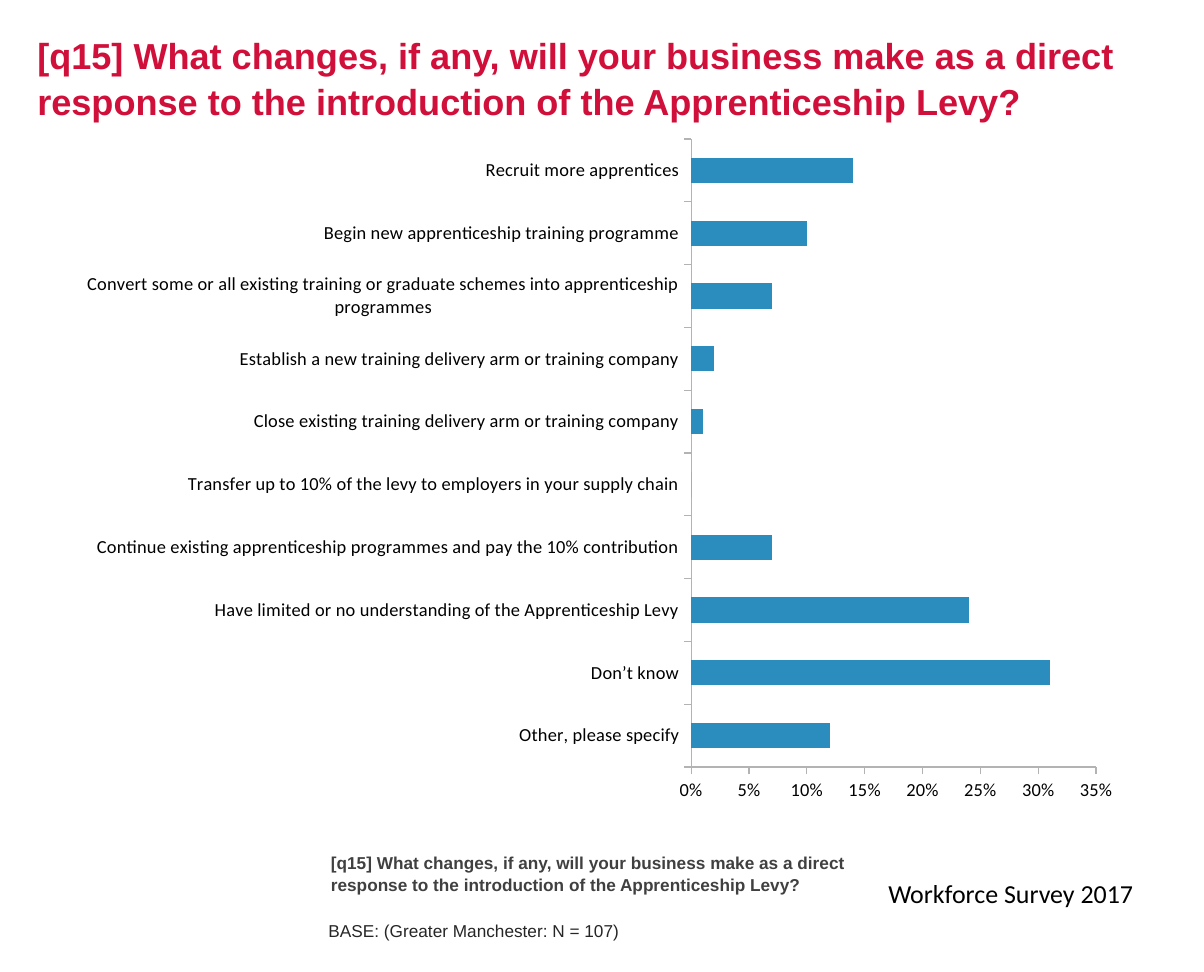
from pptx import Presentation
from pptx.chart.data import CategoryChartData
from pptx.dml.color import RGBColor
from pptx.enum import chart as charts, text
from pptx.oxml import parse_xml
from pptx.oxml.ns import nsdecls
from pptx.util import Inches, Pt

RED = RGBColor(0xD0, 0x10, 0x3A)
BLUE = RGBColor(0x2B, 0x8C, 0xBE)
BLACK = RGBColor(0x00, 0x00, 0x00)
DARK_GREY = RGBColor(0x40, 0x40, 0x40)
CHARCOAL = RGBColor(0x26, 0x26, 0x26)
AXIS_GREY = RGBColor(0xB3, 0xB3, 0xB3)

QUESTION = ("[q15] What changes, if any, will your business make as a direct "
            "response to the introduction of the Apprenticeship Levy?")

ANSWERS = [
    ("Other, please specify", 0.12),
    ("Don’t know", 0.31),
    ("Have limited or no understanding of the Apprenticeship Levy", 0.24),
    ("Continue existing apprenticeship programmes and pay the 10% contribution", 0.07),
    ("Transfer up to 10% of the levy to employers in your supply chain", 0),
    ("Close existing training delivery arm or training company", 0.01),
    ("Establish a new training delivery arm or training company", 0.02),
    ("Convert some or all existing training or graduate schemes into "
     "apprenticeship programmes", 0.07),
    ("Begin new apprenticeship training programme", 0.1),
    ("Recruit more apprentices", 0.14),
]


def write(shape, words, box, size, color, font="Arial", bold=False,
          anchor=text.MSO_ANCHOR.BOTTOM, spacing=1.0):
    """Place a text shape at box (left, top, width, height) and fill it."""
    shape.left, shape.top, shape.width, shape.height = (Inches(n) for n in box)
    frame = shape.text_frame
    frame.word_wrap = True
    frame.auto_size = text.MSO_AUTO_SIZE.NONE
    frame.vertical_anchor = anchor
    paragraph = frame.paragraphs[0]
    paragraph.alignment = text.PP_ALIGN.LEFT
    paragraph.line_spacing = spacing
    run = paragraph.add_run()
    run.text = words
    run.font.name = font
    run.font.size = Pt(size)
    run.font.bold = bold
    run.font.color.rgb = color


presentation = Presentation()
presentation.slide_width = Inches(10)
presentation.slide_height = Inches(8.07)
slide = presentation.slides.add_slide(presentation.slide_layouts[5])

# Title and footer texts
write(slide.shapes.title, QUESTION, (0.21, 0.2, 9.51, 0.88), 21.6, RED,
      bold=True, anchor=text.MSO_ANCHOR.MIDDLE, spacing=1.06)

footers = [
    ("Workforce Survey 2017", (7.28, 7.24, 2.43, 0.36),
     dict(size=15.5, color=BLACK, font="Calibri", anchor=text.MSO_ANCHOR.TOP)),
    (QUESTION, (2.65, 7.11, 4.6, 0.37),
     dict(size=10.3, color=DARK_GREY, bold=True, spacing=1.06)),
    ("BASE: (Greater Manchester: N = 107)", (2.63, 7.48, 4.6, 0.38),
     dict(size=10.3, color=CHARCOAL)),
]
for words, box, style in footers:
    write(slide.shapes.add_textbox(0, 0, 0, 0), words, box, **style)

# Bar chart of the answers
data = CategoryChartData(number_format="0%")
data.categories = [answer for answer, share in ANSWERS]
data.add_series("Series 1", [share for answer, share in ANSWERS])
chart = slide.shapes.add_chart(
    charts.XL_CHART_TYPE.BAR_CLUSTERED,
    Inches(0.52), Inches(1.04), Inches(8.85), Inches(5.73), data).chart
chart.has_legend = False
chart.has_title = False
chart.font.name = "Calibri"
chart.font.size = Pt(11)
chart.font.color.rgb = BLACK

plot = chart.plots[0]
plot.gap_width = 150
plot.vary_by_categories = False
series = plot.series[0]
series.format.fill.solid()
series.format.fill.fore_color.rgb = BLUE
series.invert_if_negative = False

for axis in (chart.category_axis, chart.value_axis):
    axis.has_major_gridlines = False
    axis.major_tick_mark = charts.XL_TICK_MARK.OUTSIDE
    axis.minor_tick_mark = charts.XL_TICK_MARK.NONE
    axis.format.line.color.rgb = AXIS_GREY
    axis.format.line.width = Pt(0.75)
chart.value_axis.minimum_scale = 0
chart.value_axis.maximum_scale = 0.35
chart.value_axis.major_unit = 0.05
chart.value_axis.tick_labels.number_format = "0%"
chart.value_axis.tick_labels.number_format_is_linked = False

# Fixed inner plot area, as fractions of the chart
plot_area = chart.plots[0]._element.getparent()
for layout in plot_area.findall("{*}layout"):
    plot_area.remove(layout)
plot_area.insert(0, parse_xml(
    f'<c:layout {nsdecls("c")}><c:manualLayout><c:layoutTarget val="inner"/>'
    '<c:xMode val="edge"/><c:yMode val="edge"/><c:x val="0.59"/><c:y val="0.02"/>'
    '<c:w val="0.38"/><c:h val="0.91"/></c:manualLayout></c:layout>'))

presentation.save("out.pptx")
